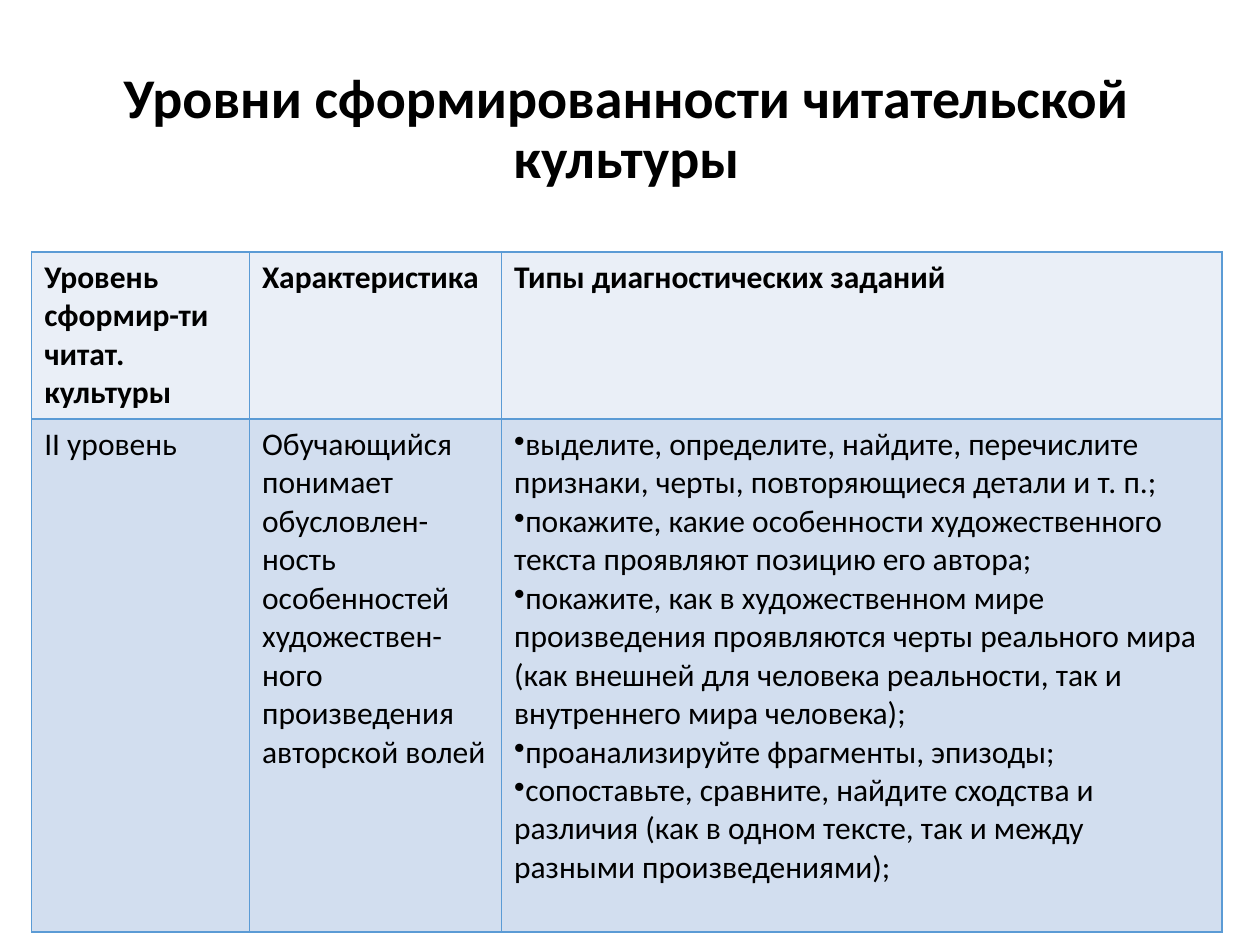
from lxml import etree
from pptx import Presentation
from pptx.dml.color import RGBColor
from pptx.enum.text import MSO_ANCHOR, PP_ALIGN
from pptx.oxml.ns import qn
from pptx.util import Cm, Pt

MIDDLE = MSO_ANCHOR.MIDDLE
CENTER = PP_ALIGN.CENTER
BLACK = RGBColor(0x00, 0x00, 0x00)
WHITE = RGBColor(0xFF, 0xFF, 0xFF)
BORDER_BLUE = RGBColor(0x5B, 0x9B, 0xD5)
HEADER_BLUE = RGBColor(0xEA, 0xEF, 0xF7)
BODY_BLUE = RGBColor(0xD2, 0xDE, 0xEF)

HEADINGS = [
    ["Уровень сформир-ти читат. культуры"],
    ["Характеристика"],
    ["Типы диагностических заданий"],
]
TASKS = [
    "выделите, определите, найдите, перечислите признаки, черты, "
    "повторяющиеся детали и т. п.;",
    "покажите, какие особенности художественного текста проявляют "
    "позицию его автора;",
    "покажите, как в художественном мире произведения проявляются черты "
    "реального мира (как внешней для человека реальности, так и "
    "внутреннего мира человека);",
    "проанализируйте фрагменты, эпизоды;",
    "сопоставьте, сравните, найдите сходства и различия (как в одном "
    "тексте, так и между разными произведениями);",
]
SECOND_LEVEL = [
    ["II уровень"],
    ["Обучающийся понимает обусловлен-ность особенностей "
     "художествен-ного произведения авторской волей"],
    TASKS,
]


class SlideBuilder:
    font_name = "Calibri"
    title_size = Pt(32)
    table_size = Pt(18)
    border_width = Pt(1)

    def __init__(self, slide):
        self.slide = slide

    def style(self, paragraph, size, bold):
        font = paragraph.font
        font.name = self.font_name
        font.size = size
        font.bold = bold
        font.color.rgb = BLACK

    def title(self, text, left, top, width, height):
        heading = self.slide.shapes.add_textbox(left, top, width, height)
        heading.fill.solid()
        heading.fill.fore_color.rgb = WHITE
        color = heading.fill._xPr.find(qn("a:solidFill"))[0]
        etree.SubElement(color, qn("a:alpha"), val="67000")
        frame = heading.text_frame
        frame.word_wrap = True
        frame.vertical_anchor = MIDDLE
        paragraph = frame.paragraphs[0]
        paragraph.text = text
        paragraph.alignment = CENTER
        paragraph.line_spacing = 0.9
        self.style(paragraph, self.title_size, True)

    def borders(self, cell):
        properties = cell._tc.get_or_add_tcPr()
        for side in ("lnL", "lnR", "lnT", "lnB"):
            line = etree.SubElement(
                properties, qn(f"a:{side}"), w=str(self.border_width))
            fill = etree.SubElement(line, qn("a:solidFill"))
            etree.SubElement(fill, qn("a:srgbClr"), val=str(BORDER_BLUE))

    def bullet(self, paragraph):
        properties = paragraph._p.get_or_add_pPr()
        properties.set("marL", "0")
        properties.set("indent", "0")
        etree.SubElement(properties, qn("a:buChar"), char="•")

    def cell(self, cell, texts, fill, bold):
        self.borders(cell)
        cell.fill.solid()
        cell.fill.fore_color.rgb = fill
        frame = cell.text_frame
        for index, text in enumerate(texts):
            paragraph = frame.add_paragraph() if index else frame.paragraphs[0]
            paragraph.text = text
            if len(texts) > 1:
                self.bullet(paragraph)
            self.style(paragraph, self.table_size, bold)

    def table(self, rows, left, top, widths, heights):
        table = self.slide.shapes.add_table(
            len(rows), len(widths), left, top, sum(widths), sum(heights)).table
        table.first_row = False
        table.horz_banding = False
        for column, width in zip(table.columns, widths):
            column.width = width
        for row, height, (texts, fill, bold) in zip(table.rows, heights, rows):
            row.height = height
            for cell, content in zip(row.cells, texts):
                self.cell(cell, content, fill, bold)


def main():
    presentation = Presentation()
    presentation.slide_width = Cm(25.4)
    presentation.slide_height = Cm(19.05)
    slide = presentation.slides.add_slide(presentation.slide_layouts[6])
    builder = SlideBuilder(slide)
    left = Cm(0.64)
    builder.title("Уровни сформированности читательской культуры",
                  left, Cm(0.56), Cm(23.98), Cm(4.14))
    builder.table(
        [(HEADINGS, HEADER_BLUE, True), (SECOND_LEVEL, BODY_BLUE, False)],
        left, Cm(5.08),
        [Cm(4.39), Cm(5.08), Cm(14.52)],
        [Cm(3.37), Cm(10.34)])
    presentation.save("out.pptx")


if __name__ == "__main__":
    main()
